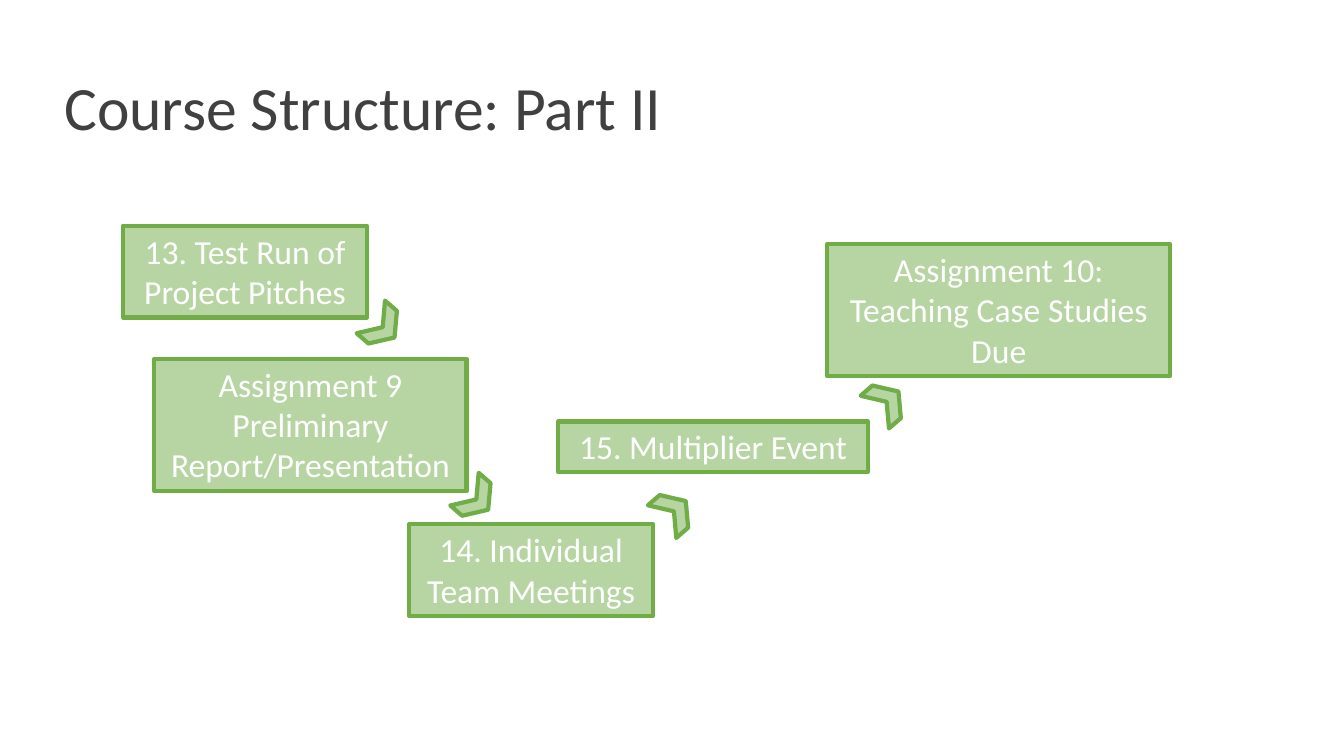
from lxml import etree
from pptx import Presentation
from pptx.dml.color import RGBColor
from pptx.enum import shapes, text
from pptx.oxml import ns
from pptx.util import Cm, Pt

COLOURS = {"green": "70AD47", "title": "404041", "label": "FFFFFF"}
TITLE_FORMAT = {"name": "Calibri", "size": Pt(44)}
LABEL_FORMAT = {"name": "Calibri", "size": Pt(24)}


def format_paragraph(paragraph, values, colour):
    for attribute, value in values.items():
        setattr(paragraph.font, attribute, value)
    paragraph.font.color.rgb = RGBColor.from_string(COLOURS[colour])


def add_green_shape(preset, left, top, width, height):
    shape = slide.shapes.add_shape(preset, Cm(left), Cm(top), Cm(width), Cm(height))
    shape.shadow.inherit = False
    green = RGBColor.from_string(COLOURS["green"])
    shape.fill.solid()
    shape.fill.fore_color.rgb = green
    # Half transparent fill
    fill_colour = shape.fill._xPr.find(".//" + ns.qn("a:srgbClr"))
    etree.SubElement(fill_colour, ns.qn("a:alpha"), val="50000")
    shape.line.color.rgb = green
    shape.line.width = Pt(3)
    return shape


deck = Presentation()
deck.slide_width, deck.slide_height = Cm(33.87), Cm(19.05)
slide = deck.slides.add_slide(deck.slide_layouts[6])

# Title
title = slide.shapes.add_textbox(Cm(1.37), Cm(0.94), Cm(29.21), Cm(3.68)).text_frame
title.word_wrap = True
title.vertical_anchor = text.MSO_ANCHOR.MIDDLE
title.text = "Course Structure: Part II"
title.paragraphs[0].line_spacing = 0.9
format_paragraph(title.paragraphs[0], TITLE_FORMAT, "title")

# Course steps: text, left, top, width, height
steps = [
    ("13. Test Run of Project Pitches", 3.1, 5.69, 6.15, 2.31),
    ("Assignment 9\nPreliminary Report/Presentation", 3.89, 9.04, 7.87, 3.33),
    ("14. Individual Team Meetings", 10.31, 13.21, 6.15, 2.31),
    ("15. Multiplier Event", 14.07, 10.62, 7.8, 1.27),
    ("Assignment 10: Teaching Case Studies Due", 20.85, 6.15, 8.64, 3.33),
]
for label, *box in steps:
    step = add_green_shape(shapes.MSO_SHAPE.RECTANGLE, *box).text_frame
    step.word_wrap = True
    step.auto_size = text.MSO_AUTO_SIZE.SHAPE_TO_FIT_TEXT
    step.vertical_anchor = text.MSO_ANCHOR.TOP
    step.text = label
    for paragraph in step.paragraphs:
        paragraph.alignment = text.PP_ALIGN.CENTER
        format_paragraph(paragraph, LABEL_FORMAT, "label")

# Chevrons down and then up between the steps: left, top, rotation
for left, top, rotation in [
    (9.25, 7.7, 41),
    (11.61, 12.04, 41),
    (16.59, 12.34, -41),
    (21.95, 9.58, -41),
]:
    chevron = add_green_shape(shapes.MSO_SHAPE.CHEVRON, left, top, 0.79, 1.09)
    chevron.rotation = rotation

deck.save("out.pptx")
